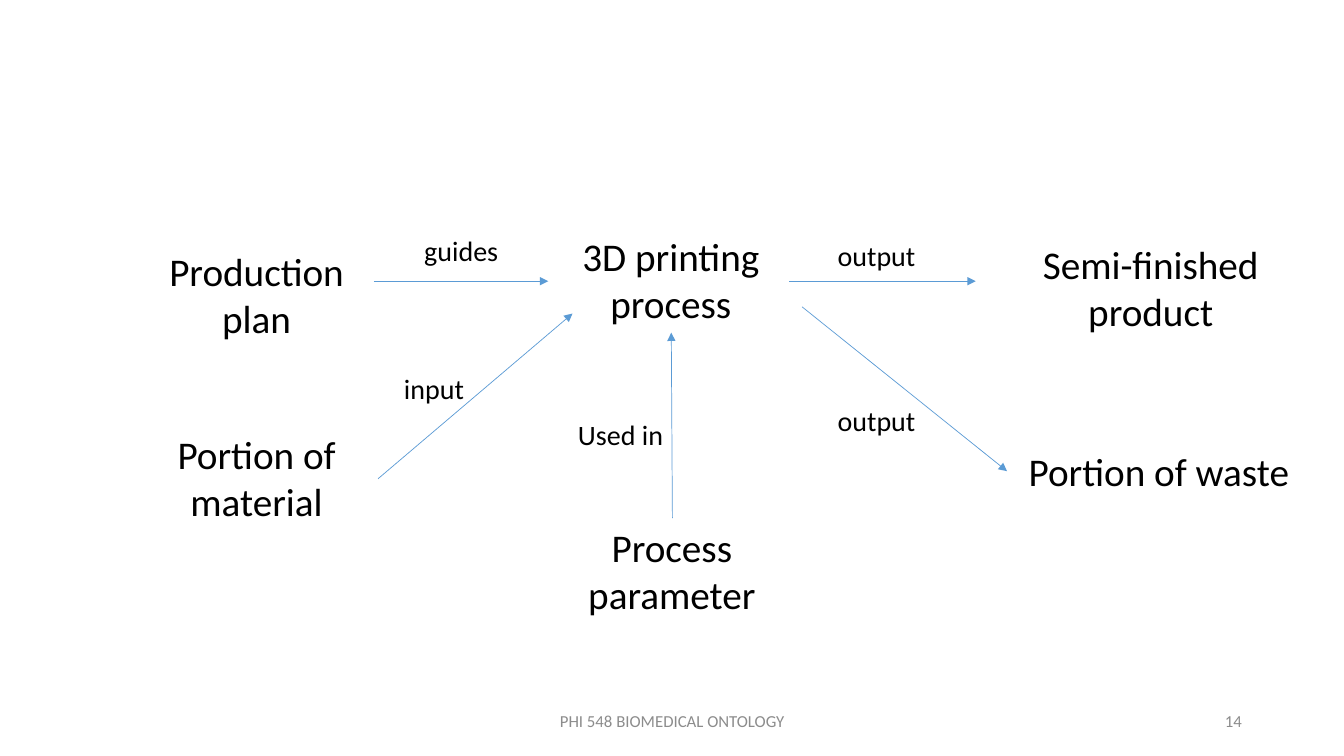
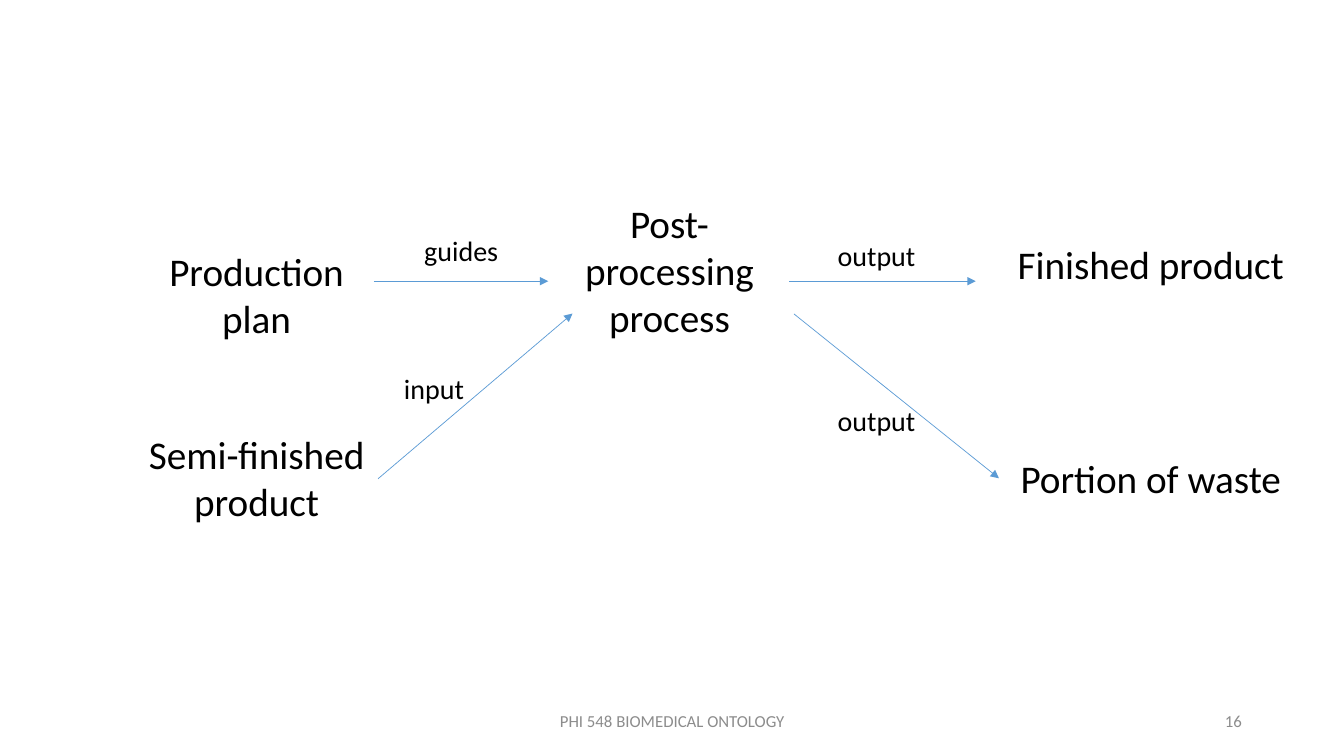
import pptx
import pptx.util
import pptx.dml.color
import pptx.enum.shapes
import pptx.enum.text
import pptx.oxml.ns
import lxml.etree

COLORS = {"text": "000000", "arrow": "5B9BD5", "footer": "8C8C8C"}
FONT = "Calibri"
ALIGN = pptx.enum.text.PP_ALIGN
ANCHOR = pptx.enum.text.MSO_ANCHOR
CONNECTOR = pptx.enum.shapes.MSO_CONNECTOR

deck = pptx.Presentation()
deck.slide_width = pptx.util.Inches(13.333)
deck.slide_height = pptx.util.Inches(7.5)
COLUMN = deck.slide_width / 100
ROW = deck.slide_height / 100


def add_label(slide, text, left, top, width, height, size=28, color="text",
              align=ALIGN.CENTER, anchor=ANCHOR.TOP):
    box = slide.shapes.add_textbox(round(left * COLUMN), round(top * ROW),
                                   round(width * COLUMN), round(height * ROW))
    frame = box.text_frame
    frame.word_wrap = True
    frame.vertical_anchor = anchor
    paragraph = frame.paragraphs[0]
    paragraph.alignment = align
    run = paragraph.add_run()
    run.text = text
    run.font.name = FONT
    run.font.size = pptx.util.Pt(size)
    run.font.color.rgb = pptx.dml.color.RGBColor.from_string(COLORS[color])


def add_arrow(slide, kind, x1, y1, x2, y2):
    arrow = slide.shapes.add_connector(kind, round(x1 * COLUMN), round(y1 * ROW),
                                       round(x2 * COLUMN), round(y2 * ROW))
    arrow.line.color.rgb = pptx.dml.color.RGBColor.from_string(COLORS["arrow"])
    arrow.line.width = pptx.util.Pt(0.5)
    qn = pptx.oxml.ns.qn
    lxml.etree.SubElement(arrow.line._get_or_add_ln(), qn("a:tailEnd"), type="triangle")
    lxml.etree.SubElement(arrow._element.spPr, qn("a:effectLst"))


FOOTER = "PHI 548 BIOMEDICAL ONTOLOGY"
FOOTER_TOP, FOOTER_HEIGHT = 92.67, 5.33
LINE_HEIGHT, BOX_PADDING = 6.27, 1.33
RELATION_WIDTH, RELATION_HEIGHT = 9.08, 5.87
LEFT_COLUMN, LEFT_WIDTH = 10.05, 18.08
CENTER_COLUMN, CENTER_WIDTH = 40.95, 17.93
RIGHT_COLUMN, RIGHT_WIDTH = 74.33, 22.58
WASTE_RUN, WASTE_DROP = 15.25, 21.74

shared_relations = [
    ("guides", 29.78, 30.27),
    ("output", 60.68, 30.93),
    ("input", 27.75, 48.53),
    ("output", 60.68, 52.67),
]
shared_arrows = [
    (CONNECTOR.CURVE, 27.83, 37.2, 40.8, 37.2),
    (CONNECTOR.CURVE, 58.73, 37.2, 72.6, 37.2),
    (CONNECTOR.STRAIGHT, 28.13, 63.33, 42.6, 41.47),
]
processes = [
    {
        "number": "14",
        "terms": [
            ("3D printing process", CENTER_COLUMN, 30.13, CENTER_WIDTH, 2),
            ("Semi-finished product", RIGHT_COLUMN, 31.07, RIGHT_WIDTH, 2),
            ("Portion of material", LEFT_COLUMN, 56.27, LEFT_WIDTH, 2),
            ("Process parameter", CENTER_COLUMN, 68.53, LEFT_WIDTH, 2),
        ],
        "waste": (74.93, 58.53),
        "relations": [("Used in", 41.63, 54.53)],
        "arrows": [(CONNECTOR.STRAIGHT, 50.03, 68.53, 49.95, 44)],
    },
    {
        "number": "16",
        "terms": [
            ("Post-processing process", CENTER_COLUMN - 0.1, 25.73, CENTER_WIDTH, 3),
            ("Finished product", RIGHT_COLUMN, 31.07, RIGHT_WIDTH, 1),
            ("Semi-finished product", LEFT_COLUMN, 56.27, LEFT_WIDTH, 2),
        ],
        "waste": (RIGHT_COLUMN, 59.47),
        "relations": [],
        "arrows": [],
    },
]

for process in processes:
    slide = deck.slides.add_slide(deck.slide_layouts[6])

    waste_left, waste_top = process["waste"]
    terms = process["terms"] + [
        ("Production plan", LEFT_COLUMN, 32, LEFT_WIDTH, 2),
        ("Portion of waste", waste_left, waste_top, RIGHT_WIDTH, 1),
    ]
    for term, left, top, width, lines in terms:
        add_label(slide, term, left, top, width, lines * LINE_HEIGHT + BOX_PADDING)

    waste_middle = waste_top + (LINE_HEIGHT + BOX_PADDING) / 2
    waste_arrow = (CONNECTOR.STRAIGHT, waste_left - WASTE_RUN, waste_middle - WASTE_DROP,
                   waste_left, waste_middle)
    for arrow in shared_arrows + process["arrows"] + [waste_arrow]:
        add_arrow(slide, *arrow)

    for relation, left, top in shared_relations + process["relations"]:
        add_label(slide, relation, left, top, RELATION_WIDTH, RELATION_HEIGHT, size=20)

    for text, left, width, align in [
        (FOOTER, 33.15, 33.75, ALIGN.CENTER),
        (process["number"], 70.65, 22.5, ALIGN.RIGHT),
    ]:
        add_label(slide, text, left, FOOTER_TOP, width, FOOTER_HEIGHT, size=12,
                  color="footer", align=align, anchor=ANCHOR.MIDDLE)

deck.save("out.pptx")
